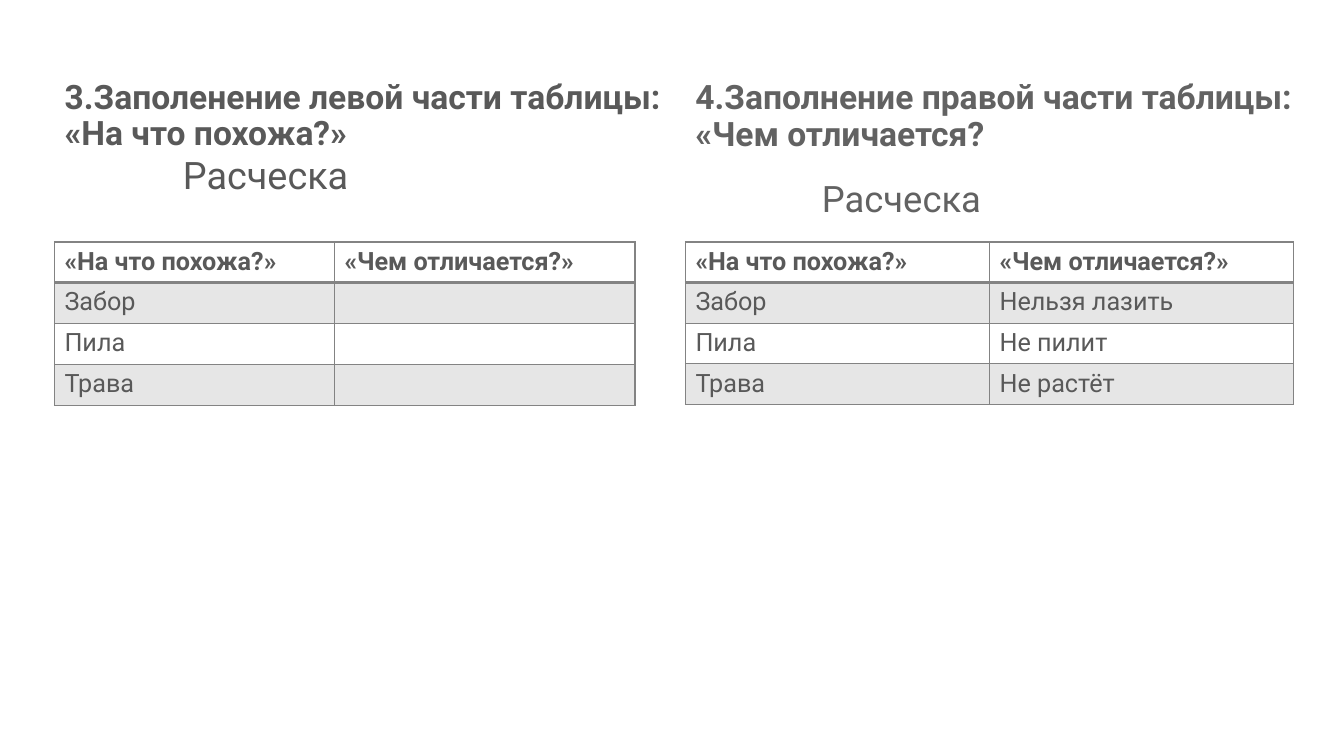
import pptx
import pptx.dml.color
import pptx.enum.text
import pptx.oxml.ns
import pptx.util
from lxml import etree

Pt = pptx.util.Pt
RGB = pptx.dml.color.RGBColor
ANCHOR = pptx.enum.text.MSO_ANCHOR
qn = pptx.oxml.ns.qn

# Content
HEADER = ("«На что похожа?»", "«Чем отличается?»")
LEFT = {
    "heading": "3.Заполенение левой части таблицы:\v«На что похожа?»",
    "word": "Расческа",
    "rows": [HEADER, ("Забор", ""), ("Пила", ""), ("Трава", "")],
}
RIGHT = {
    "heading": "4.Заполнение правой части таблицы:\v«Чем отличается?",
    "word": "Расческа",
    "rows": [HEADER, ("Забор", "Нельзя лазить"), ("Пила", "Не пилит"),
             ("Трава", "Не растёт")],
}

# Style
FONT = "Roboto"
DARK = RGB(0x59, 0x59, 0x59)
GREY = RGB(0x62, 0x62, 0x62)
BAND = RGB(0xE6, 0xE6, 0xE6)
BORDER = RGB(0x83, 0x83, 0x83)

# Layout in points
LEFT_X, RIGHT_X = 38.9, 489.6
TEXT_Y, TABLE_Y, ROW_H = 52.6, 172.8, 29


def format_runs(p, size, color, bold):
    for r in p.runs:
        r.font.name = FONT
        r.font.size = Pt(size)
        r.font.bold = bold
        r.font.color.rgb = color


def fill_heading(tf, part, color, word_size, indent, gap):
    """Bold two-line heading with the indented word below it."""
    tf.word_wrap = True
    tf.auto_size = pptx.enum.text.MSO_AUTO_SIZE.NONE
    tf.margin_left = tf.margin_right = Pt(7.2)
    tf.text = part["heading"]
    word = tf.add_paragraph()
    word.text = part["word"]
    pPr = word._p.get_or_add_pPr()
    pPr.set("marL", str(Pt(indent)))
    pPr.set("indent", "0")
    for p, size, space, bold in ((tf.paragraphs[0], 24, 0, True),
                                 (word, word_size, gap, False)):
        p.alignment = pptx.enum.text.PP_ALIGN.LEFT
        p.line_spacing = 0.9
        p.space_before = Pt(space)
        format_runs(p, size, color, bold)


def set_borders(cell, top, bottom):
    tcPr = cell._tc.get_or_add_tcPr()
    for tag, width in (("lnL", 1), ("lnR", 1), ("lnT", top), ("lnB", bottom)):
        ln = etree.SubElement(tcPr, qn("a:" + tag), w=str(Pt(width)))
        fill = etree.SubElement(ln, qn("a:solidFill"))
        etree.SubElement(fill, qn("a:srgbClr"), val=str(BORDER))


def add_comparison(s, rows, x, widths):
    frame = s.shapes.add_table(len(rows), len(widths), Pt(x), Pt(TABLE_Y),
                               Pt(sum(widths)), Pt(ROW_H * len(rows)))
    table = frame.table
    table.first_row = table.horz_banding = False
    for column, width in zip(table.columns, widths):
        column.width = Pt(width)
    for i, row in enumerate(rows):
        table.rows[i].height = Pt(ROW_H)
        for j, text in enumerate(row):
            cell = table.cell(i, j)
            # The rule under the header row is thicker
            set_borders(cell, 2 if i == 1 else 1, 2 if i == 0 else 1)
            if i % 2:
                cell.fill.solid()
                cell.fill.fore_color.rgb = BAND
            else:
                cell.fill.background()
            if text:
                cell.text_frame.text = text
                format_runs(cell.text_frame.paragraphs[0], 18, DARK, i == 0)


def main():
    prs = pptx.Presentation()
    prs.slide_width, prs.slide_height = Pt(960), Pt(540)
    s = prs.slides.add_slide(prs.slide_layouts[5])

    # Left heading
    title = s.shapes.title
    title.left, title.top = Pt(LEFT_X), Pt(TEXT_Y)
    title.width, title.height = Pt(458.6), Pt(93.6)
    tf = title.text_frame
    tf.vertical_anchor = ANCHOR.BOTTOM
    tf.margin_bottom = Pt(4.7)
    fill_heading(tf, LEFT, DARK, 27, 84.6, 3.2)

    # Right heading
    box = s.shapes.add_textbox(Pt(RIGHT_X), Pt(TEXT_Y), Pt(504), Pt(72))
    tf = box.text_frame
    tf.vertical_anchor = ANCHOR.TOP
    tf.margin_top = Pt(5.2)
    fill_heading(tf, RIGHT, GREY, 26, 90.4, 20)

    # Tables
    add_comparison(s, LEFT["rows"], LEFT_X, (200, 214.7))
    add_comparison(s, RIGHT["rows"], RIGHT_X, (217.2, 217.2))

    prs.save("out.pptx")


if __name__ == "__main__":
    main()
